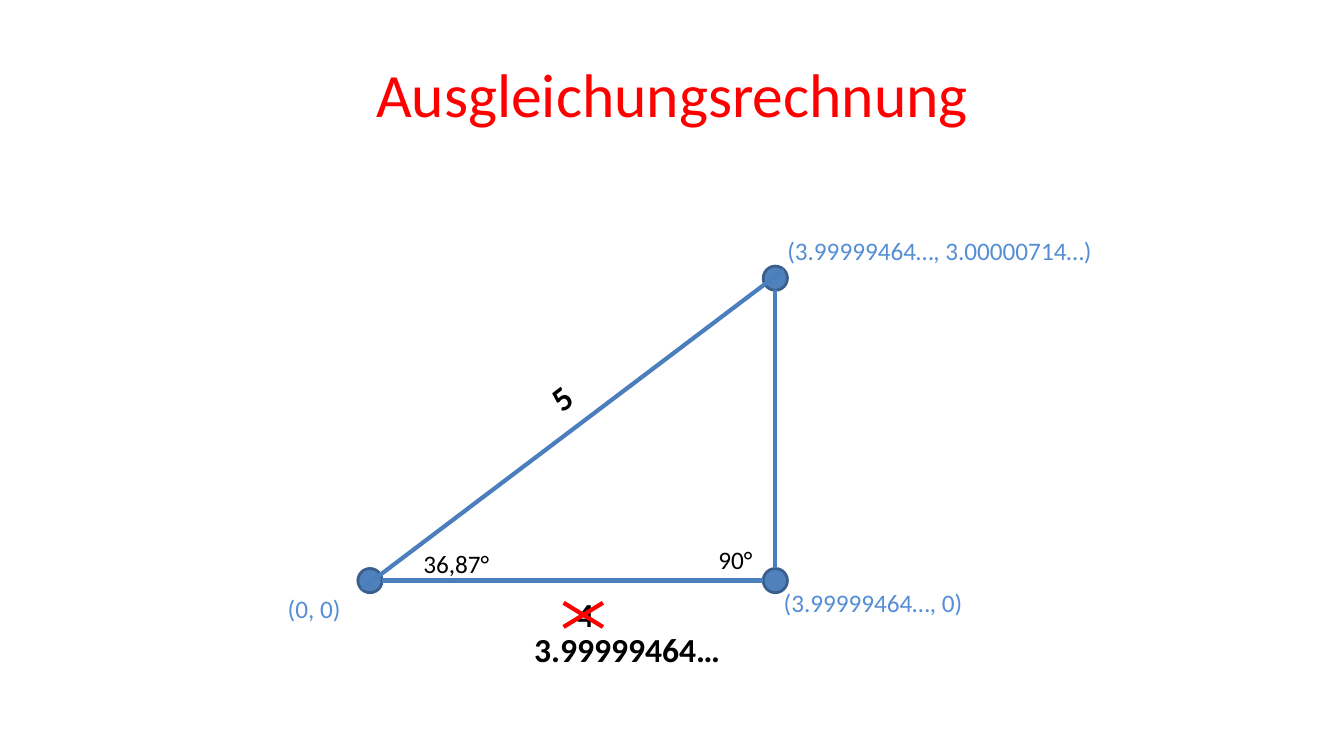
from dataclasses import dataclass

from pptx import Presentation
from pptx.dml.color import RGBColor
from pptx.enum.shapes import MSO_CONNECTOR, MSO_SHAPE
from pptx.enum.text import MSO_ANCHOR, MSO_AUTO_SIZE, PP_ALIGN
from pptx.oxml.ns import qn
from pptx.util import Inches, Pt

RED = RGBColor(0xFF, 0x00, 0x00)
BLACK = RGBColor(0x00, 0x00, 0x00)
NODE = RGBColor(0x4F, 0x81, 0xBD)
RIM = RGBColor(0x3A, 0x5F, 0x8C)
EDGE = RGBColor(0x4B, 0x7E, 0xBC)
LIGHT = RGBColor(0x55, 0x8E, 0xD5)
FONT = "Calibri"
RADIUS = 0.12


@dataclass
class Point:
    x: float
    y: float


@dataclass
class Line:
    start: Point
    end: Point
    color: RGBColor = EDGE


@dataclass
class Label:
    text: str
    left: float
    top: float
    width: float
    color: RGBColor = BLACK
    size: int = 18
    bold: bool = False
    angle: float = 0


def set_text(frame, text: str, *, size: int, color: RGBColor,
             bold: bool = False) -> None:
    frame.word_wrap = True
    para = frame.paragraphs[0]
    para.alignment = PP_ALIGN.CENTER
    run = para.add_run()
    run.text = text
    font = run.font
    font.name, font.size, font.bold = FONT, Pt(size), bold
    font.color.rgb = color


def draw_node(slide, spot: Point) -> None:
    node = slide.shapes.add_shape(
        MSO_SHAPE.OVAL, Inches(spot.x - RADIUS), Inches(spot.y - RADIUS),
        Inches(2 * RADIUS), Inches(2 * RADIUS))
    node.shadow.inherit = False
    node.fill.solid()
    node.fill.fore_color.rgb = NODE
    node.line.color.rgb = RIM
    node.line.width = Pt(2)


def draw_line(slide, line: Line) -> None:
    edge = slide.shapes.add_connector(
        MSO_CONNECTOR.STRAIGHT, Inches(line.start.x), Inches(line.start.y),
        Inches(line.end.x), Inches(line.end.y))
    edge.line.color.rgb = line.color
    edge.line.width = Pt(3)
    props = edge._element.spPr
    props.append(props.makeelement(qn("a:effectLst"), {}))


def draw_label(slide, label: Label) -> None:
    height = 0.5 if label.size == 24 else 0.4
    box = slide.shapes.add_textbox(
        Inches(label.left), Inches(label.top),
        Inches(label.width), Inches(height))
    box.rotation = label.angle
    set_text(box.text_frame, label.text, size=label.size,
             color=label.color, bold=label.bold)
    box.text_frame.auto_size = MSO_AUTO_SIZE.SHAPE_TO_FIT_TEXT


# Triangle corners and sides
ORIGIN, RIGHT, TOP = Point(3.67, 5.76), Point(7.69, 5.76), Point(7.69, 2.76)
SIDES = [
    Line(Point(ORIGIN.x + RADIUS, ORIGIN.y), Point(RIGHT.x - RADIUS, RIGHT.y)),
    Line(Point(TOP.x, TOP.y + RADIUS), Point(RIGHT.x, RIGHT.y - RADIUS)),
    Line(Point(ORIGIN.x - 0.08, ORIGIN.y + 0.08),
         Point(TOP.x + 0.08, TOP.y - 0.08)),
]

# Lengths, angles and coordinates
LABELS = [
    Label("3.99999464…", 5.14, 6.19, 2.16, size=24, bold=True),
    Label("5", 5.17, 3.7, 0.79, size=24, bold=True, angle=322.6),
    Label("90°", 6.9, 5.35, 0.79),
    Label("36,87°", 4.03, 5.39, 0.99),
    Label("(3.99999464…, 3.00000714…)", 7.45, 2.29, 3.74, LIGHT),
    Label("(0, 0)", 2.62, 5.84, 0.99, LIGHT),
    Label("(3.99999464…, 0)", 6.78, 5.78, 3.76, LIGHT),
    Label("4", 5.41, 5.84, 0.79, size=24, bold=True),
]

# Cross over the old length
CROSS = [
    Line(Point(5.59, 5.98), Point(5.98, 6.22), RED),
    Line(Point(5.59, 6.22), Point(5.98, 5.98), RED),
]


def main() -> None:
    deck = Presentation()
    deck.slide_width, deck.slide_height = Inches(13.33), Inches(7.5)
    slide = deck.slides.add_slide(deck.slide_layouts.get_by_name("Title Only"))

    # Title
    title = slide.shapes.title
    title.left, title.top = Inches(2.17), Inches(0.3)
    title.width, title.height = Inches(9), Inches(1.25)
    title.text_frame.vertical_anchor = MSO_ANCHOR.MIDDLE
    set_text(title.text_frame, "Ausgleichungsrechnung", size=44, color=RED)

    # Drawing, from back to front
    for spot in (ORIGIN, RIGHT, TOP):
        draw_node(slide, spot)
    for side in SIDES:
        draw_line(slide, side)
    for label in LABELS:
        draw_label(slide, label)
    for stroke in CROSS:
        draw_line(slide, stroke)

    deck.save("out.pptx")


if __name__ == "__main__":
    main()
